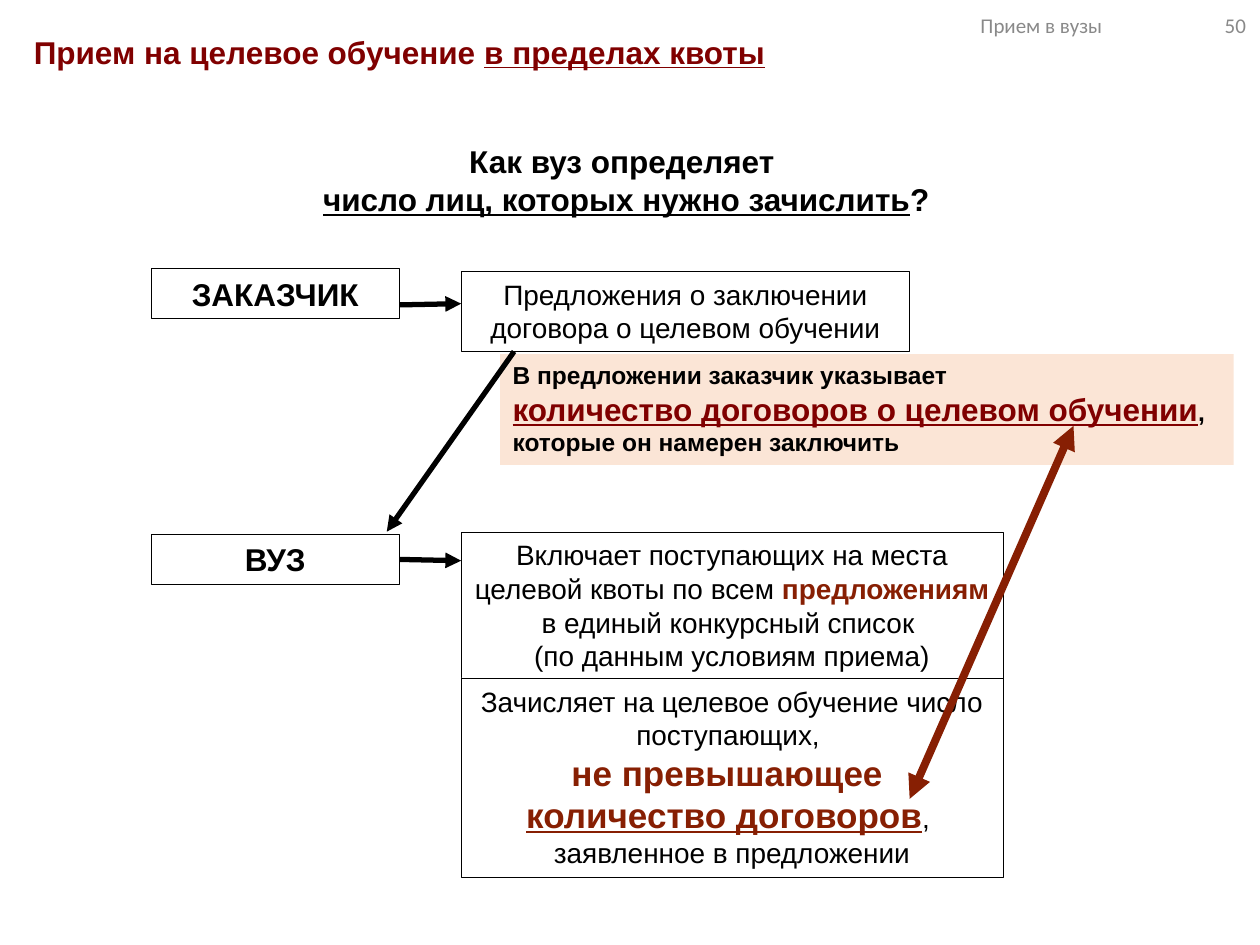
"""Build the slide about targeted admission within the quota."""
from dataclasses import dataclass
from typing import Optional

from lxml.etree import SubElement
from pptx import Presentation
from pptx.dml.color import RGBColor
from pptx.enum.shapes import MSO_CONNECTOR, MSO_SHAPE
from pptx.enum.text import MSO_ANCHOR, MSO_AUTO_SIZE, PP_ALIGN
from pptx.oxml.ns import qn
from pptx.util import Inches, Pt

COLORS = {"black": "000000", "white": "FFFFFF", "maroon": "800000",
          "rust": "871F03", "peach": "FBE5D6", "gray": "898989"}
COLUMNS, ROWS = 100, 75

deck = Presentation()
deck.slide_width, deck.slide_height = Inches(10), Inches(7.5)
slide = deck.slides.add_slide(deck.slide_layouts[6])


@dataclass
class Run:
    text: str
    size: float = 16
    color: str = "black"
    bold: bool = False
    underline: bool = False
    font: str = "Arial"


@dataclass
class Block:
    column: float
    row: float
    columns: float
    rows: float
    paragraphs: list[list[Run]]
    fill: Optional[str] = None
    outlined: bool = False
    align: PP_ALIGN = PP_ALIGN.CENTER
    anchor: MSO_ANCHOR = MSO_ANCHOR.TOP
    autosize: MSO_AUTO_SIZE = MSO_AUTO_SIZE.SHAPE_TO_FIT_TEXT


@dataclass
class Arrow:
    start: tuple[float, float]
    end: tuple[float, float]
    color: str = "black"
    width: float = 3
    double: bool = False
    source: Optional[str] = None


def rgb(name: str) -> RGBColor:
    """Return the named colour."""
    return RGBColor.from_string(COLORS[name])


def x(column: float) -> int:
    """Return the horizontal position of a grid column."""
    return round(deck.slide_width * column / COLUMNS)


def y(row: float) -> int:
    """Return the vertical position of a grid row."""
    return round(deck.slide_height * row / ROWS)


def apply(target, values: dict) -> None:
    """Set every named attribute on the target."""
    for name, value in values.items():
        setattr(target, name, value)


def draw_block(block: Block):
    """Draw a box or plain text block and return its shape."""
    area = x(block.column), y(block.row), x(block.columns), y(block.rows)
    if block.fill:
        shape = slide.shapes.add_shape(MSO_SHAPE.RECTANGLE, *area)
        shape.shadow.inherit = False
        shape.fill.solid()
        shape.fill.fore_color.rgb = rgb(block.fill)
        if block.outlined:
            shape.line.color.rgb = rgb("black")
            shape.line.width = Pt(0.25)
        else:
            shape.line.fill.background()
    else:
        shape = slide.shapes.add_textbox(*area)
    frame = shape.text_frame
    apply(frame, {"word_wrap": True, "auto_size": block.autosize,
                  "vertical_anchor": block.anchor})
    for index, runs in enumerate(block.paragraphs):
        paragraph = frame.paragraphs[0] if index == 0 else frame.add_paragraph()
        paragraph.alignment = block.align
        for part in runs:
            run = paragraph.add_run()
            run.text = part.text
            apply(run.font, {"name": part.font, "size": Pt(part.size),
                             "bold": part.bold, "underline": part.underline})
            run.font.color.rgb = rgb(part.color)
    return shape


def draw_arrow(arrow: Arrow, shapes: dict) -> None:
    """Draw a straight arrow, joined to its source box if it has one."""
    connector = slide.shapes.add_connector(
        MSO_CONNECTOR.STRAIGHT, x(arrow.start[0]), y(arrow.start[1]),
        x(arrow.end[0]), y(arrow.end[1]))
    if arrow.source:
        connector.begin_connect(shapes[arrow.source], 3)
    connector.line.color.rgb = rgb(arrow.color)
    connector.line.width = Pt(arrow.width)
    properties = connector.line._get_or_add_ln()
    for end in ("a:headEnd", "a:tailEnd") if arrow.double else ("a:tailEnd",):
        SubElement(properties, qn(end), type="triangle")
    SubElement(connector._element.spPr, qn("a:effectLst"))


def add_tabs(shape, stops: list[tuple[float, str]]) -> None:
    """Give the first paragraph tab stops measured in columns."""
    properties = shape.text_frame.paragraphs[0]._p.get_or_add_pPr()
    tabs = SubElement(properties, qn("a:tabLst"))
    for column, side in stops:
        SubElement(tabs, qn("a:tab"), pos=str(x(column)), algn=side)


BOX = {"fill": "white", "outlined": True}
ROLE = {"columns": 19.7, "rows": 4, **BOX}
STEP = {"column": 36.6, **BOX}
LEFT = {"align": PP_ALIGN.LEFT}
FIXED = {"autosize": MSO_AUTO_SIZE.NONE, **LEFT}

BLOCKS = {
    "university": Block(12, 42.4, paragraphs=[[Run("ВУЗ", 18, bold=True)]], **ROLE),
    "customer": Block(12, 21.3, paragraphs=[[Run("ЗАКАЗЧИК", 18, bold=True)]], **ROLE),
    "proposals": Block(row=21.5, columns=35.6, rows=6.4, paragraphs=[
        [Run("Предложения о заключении договора о целевом обучении")]], **STEP),
    "question": Block(24.4, 10.8, 50.6, 7.1, [
        [Run("Как вуз определяет ", 18, bold=True)],
        [Run("число лиц, которых нужно зачислить", 18, bold=True, underline=True),
         Run("?", 18, bold=True)]]),
    "contract count": Block(39.7, 28.1, 58.2, 8.8, [
        [Run("В предложении заказчик указывает", 14, bold=True)],
        [Run("количество договоров о целевом обучении", 18, "maroon", True, True),
         Run(", которые он намерен заключить", 14, bold=True)]], fill="peach", **LEFT),
    "title": Block(1.7, 2.1, 98, 4.7, [
        [Run("Прием на целевое обучение ", 18, "maroon", True),
         Run("в пределах квоты", 18, "maroon", True, True)]], **FIXED),
    "header": Block(70.5, 0, 29.5, 4, [
        [Run("\tПрием в вузы\t50", 12, "gray", font="Calibri")]],
        anchor=MSO_ANCHOR.MIDDLE, **FIXED),
    "ranking": Block(row=42.2, columns=43, rows=14.5, paragraphs=[
        [Run("Включает поступающих на места целевой квоты по всем "),
         Run("предложениям", color="rust", bold=True)],
        [Run("в единый конкурсный список ")],
        [Run("(по данным условиям приема)")]], **STEP),
    "enrolment": Block(row=53.8, columns=43, rows=15.8, paragraphs=[
        [Run("Зачисляет на целевое обучение число поступающих, ")],
        [Run("не превышающее ", 20, "rust", True)],
        [Run("количество договоров", 20, "rust", True, True), Run(", ")],
        [Run("заявленное в предложении")]], **STEP),
}

ARROWS = [
    Arrow((31.7, 44.4), (36.6, 44.5), source="university"),
    Arrow((31.7, 24.2), (36.6, 24.1)),
    Arrow((40.8, 27.9), (30.7, 42.2)),
    Arrow((72.2, 63.4), (85.2, 33.8), "rust", 4.5, double=True),
]

drawn = {name: draw_block(block) for name, block in BLOCKS.items()}
add_tabs(drawn["header"], [(16, "r"), (27.4, "r")])
for link in ARROWS:
    draw_arrow(link, drawn)

deck.save("out.pptx")
